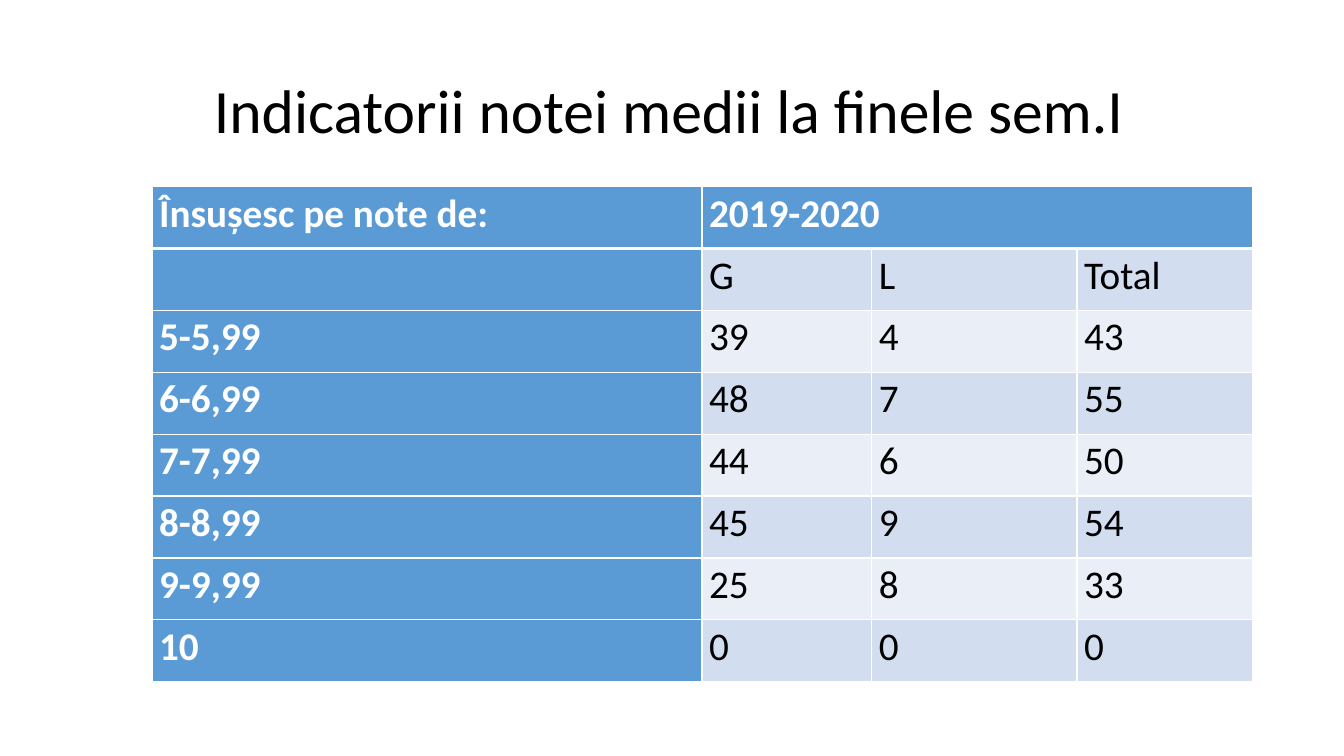
from lxml import etree
from pptx import Presentation
from pptx.dml.color import RGBColor
from pptx.enum.text import MSO_ANCHOR, MSO_AUTO_SIZE, PP_ALIGN
from pptx.oxml.ns import qn
from pptx.util import Cm, Pt

LEFT, JUSTIFY = PP_ALIGN.LEFT, PP_ALIGN.JUSTIFY
MIDDLE, NO_FIT = MSO_ANCHOR.MIDDLE, MSO_AUTO_SIZE.NONE

TITLE = "Indicatorii notei medii la finele sem.I"
ROWS = [
    ("Însușesc pe note de:", "2019-2020", "", ""),
    ("", "G", "L", "Total"),
    ("5-5,99", "39", "4", "43"),
    ("6-6,99", "48", "7", "55"),
    ("7-7,99", "44", "6", "50"),
    ("8-8,99", "45", "9", "54"),
    ("9-9,99", "25", "8", "33"),
    ("10", "0", "0", "0"),
]
COLORS = {"head": "5B9BD5", "odd": "D2DEEF", "even": "EAEFF7",
          "white": "FFFFFF", "black": "000000"}
COL_WIDTHS = [13.86, 4.28, 5.17, 4.42]
ROW_HEIGHT = 1.56
TABLE_LEFT, TABLE_TOP = 3.83, 4.7
TITLE_BOX = {"left": Cm(2.33), "top": Cm(1.01), "width": Cm(29.21), "height": Cm(3.68)}
TITLE_FRAME = {"margin_left": Cm(3.06), "vertical_anchor": MIDDLE,
               "word_wrap": True, "auto_size": NO_FIT}
CELL_MARGINS = {"margin_left": Cm(0.18), "margin_right": Cm(0.18),
                "margin_top": 0, "margin_bottom": 0}


def apply(target, values):
    for name, value in values.items():
        setattr(target, name, value)


def rgb(name):
    return RGBColor.from_string(COLORS[name])


def write(tf, text, size, color, bold, align, spacing):
    p = tf.paragraphs[0]
    apply(p, {"alignment": align, "line_spacing": spacing})
    apply(p.font, {"size": Pt(size), "name": "Calibri"})
    if text:
        r = p.add_run()
        r.text = text
        apply(r.font, {"size": Pt(size), "name": "Calibri", "bold": bold})
        r.font.color.rgb = rgb(color)


def add_borders(cell, widths):
    tc_pr = cell._tc.get_or_add_tcPr()
    for side, width in widths.items():
        ln = etree.SubElement(tc_pr, qn(f"a:ln{side}"), w=str(Pt(width)))
        fill = etree.SubElement(ln, qn("a:solidFill"))
        etree.SubElement(fill, qn("a:srgbClr"), val=COLORS["white"])


prs = Presentation()
prs.slide_width, prs.slide_height = Cm(33.87), Cm(19.05)
s = prs.slides.add_slide(prs.slide_layouts[5])

title = s.shapes.title
apply(title, TITLE_BOX)
apply(title.text_frame, TITLE_FRAME)
write(title.text_frame, TITLE, 44, "black", False, LEFT, 0.9)

table = s.shapes.add_table(
    len(ROWS), len(COL_WIDTHS), Cm(TABLE_LEFT), Cm(TABLE_TOP),
    Cm(sum(COL_WIDTHS)), Cm(ROW_HEIGHT * len(ROWS))).table
for column, width in zip(table.columns, COL_WIDTHS):
    column.width = Cm(width)
for row in table.rows:
    row.height = Cm(ROW_HEIGHT)
table.cell(0, 1).merge(table.cell(0, 3))

for i, values in enumerate(ROWS):
    band = "odd" if i % 2 else "even"
    for j, text in enumerate(values):
        cell = table.cell(i, j)
        is_head = i == 0 or j == 0
        apply(cell, CELL_MARGINS)
        add_borders(cell, {"L": 1, "R": 1, "T": 3 if i == 1 else 1, "B": 3 if i == 0 else 1})
        cell.fill.solid()
        cell.fill.fore_color.rgb = rgb("head" if is_head else band)
        write(cell.text_frame, text, 28, "white" if is_head else "black",
              is_head, JUSTIFY, 1.07)

prs.save("out.pptx")
